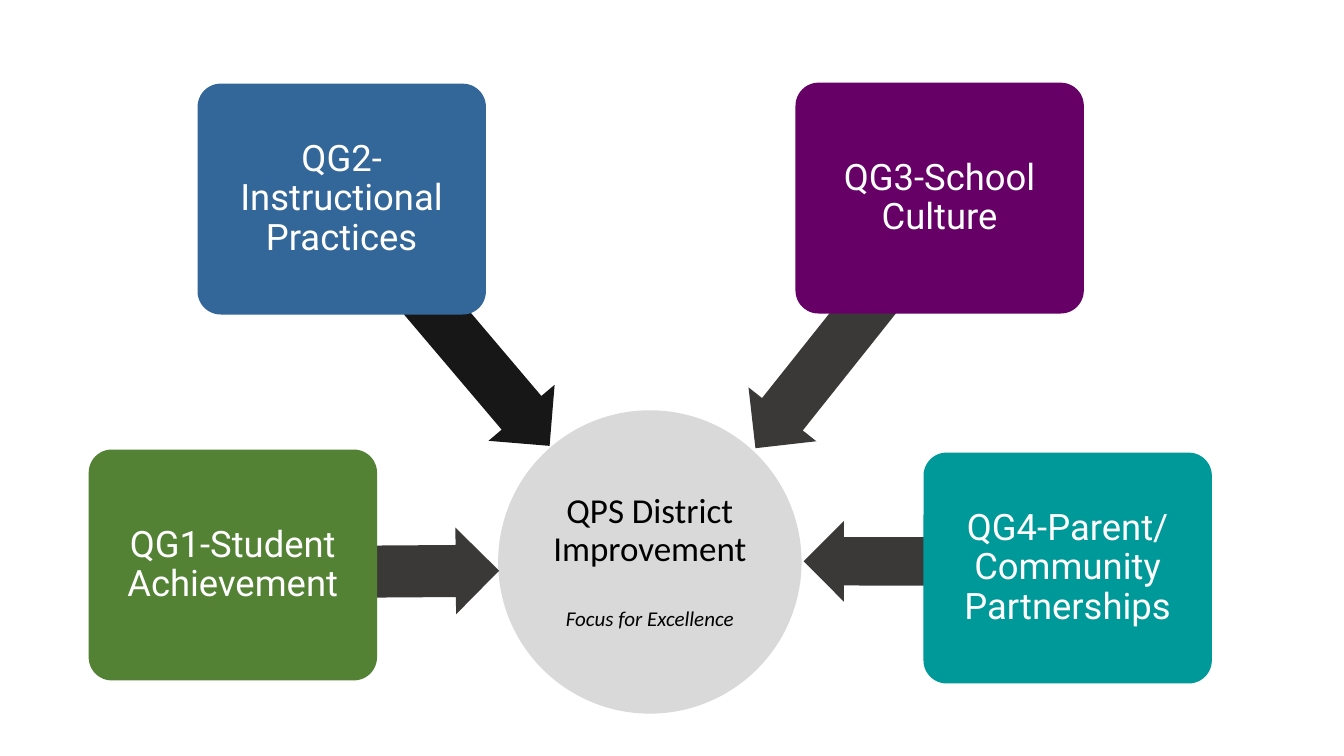
from pptx import Presentation
from pptx.dml.color import RGBColor
from pptx.enum.shapes import MSO_SHAPE as Shape
from pptx.enum.text import MSO_ANCHOR as Anchor, PP_ALIGN as Align
from pptx.util import Pt

PX = 9144
WHITE = RGBColor(0xFF, 0xFF, 0xFF)
BLACK = RGBColor(0x00, 0x00, 0x00)
GRAY = RGBColor(0xD9, 0xD9, 0xD9)
DARK = RGBColor(0x3B, 0x38, 0x38)
INK = RGBColor(0x18, 0x17, 0x17)
GREEN = RGBColor(0x54, 0x82, 0x35)
BLUE = RGBColor(0x33, 0x66, 0x99)
PURPLE = RGBColor(0x66, 0x00, 0x66)
TEAL = RGBColor(0x00, 0x99, 0x99)

GOAL_W, GOAL_H = 286, 229
GOALS = [
    ("QG1-Student Achievement", 88, 446, GREEN, (246, 524, 249, 86), 179.6, DARK),
    ("QG2-Instructional Practices", 196, 83, BLUE, (294, 283, 305, 86), 229.7, INK),
    ("QG3-School Culture", 789, 82, PURPLE, (694, 287, 293, 86), 308.5, DARK),
    ("QG4-Parent/Community Partnerships", 916, 449, TEAL, (797, 517, 222, 80), 0.1, DARK),
]


def add_shape(slide, kind, box, color):
    shape = slide.shapes.add_shape(kind, *(n * PX for n in box))
    shape.shadow.inherit = False
    shape.fill.solid()
    shape.fill.fore_color.rgb = color
    shape.line.fill.background()
    return shape


def set_text(shape, text, inset, face, size, color):
    frame = shape.text_frame
    frame.word_wrap = True
    frame.vertical_anchor = Anchor.MIDDLE
    frame.margin_left = frame.margin_right = inset * PX
    frame.margin_top = frame.margin_bottom = inset * PX
    frame.text = text
    for para in frame.paragraphs:
        para.alignment = Align.CENTER
        para.line_spacing = 0.9
        for run in para.runs:
            run.font.name = face
            run.font.size = Pt(size)
            run.font.color.rgb = color
    return frame


def add_hub(slide):
    hub = add_shape(slide, Shape.OVAL, (494, 407, 301, 301), GRAY)
    text = "QPS District Improvement\nFocus for Excellence"
    frame = set_text(hub, text, 2, "Calibri", 25, BLACK)
    motto = frame.paragraphs[1]
    motto.space_before = Pt(28)
    font = motto.runs[0].font
    font.size = Pt(15)
    font.italic = True


def add_arrow(slide, box, angle, color):
    arrow = add_shape(slide, Shape.LEFT_ARROW, box, color)
    arrow.adjustments[0] = 0.6
    arrow.adjustments[1] = 0.5
    arrow.rotation = angle


def add_goal(slide, text, left, top, color):
    box = (left, top, GOAL_W, GOAL_H)
    goal = add_shape(slide, Shape.ROUNDED_RECTANGLE, box, color)
    goal.adjustments[0] = 0.1
    set_text(goal, text, 5, "Roboto", 26, WHITE)


def main():
    deck = Presentation()
    deck.slide_width = 1333 * PX
    deck.slide_height = 750 * PX
    slide = deck.slides.add_slide(deck.slide_layouts[6])
    add_hub(slide)
    for text, left, top, color, box, angle, shade in GOALS:
        add_arrow(slide, box, angle, shade)
        add_goal(slide, text, left, top, color)
    deck.save("out.pptx")


if __name__ == "__main__":
    main()
